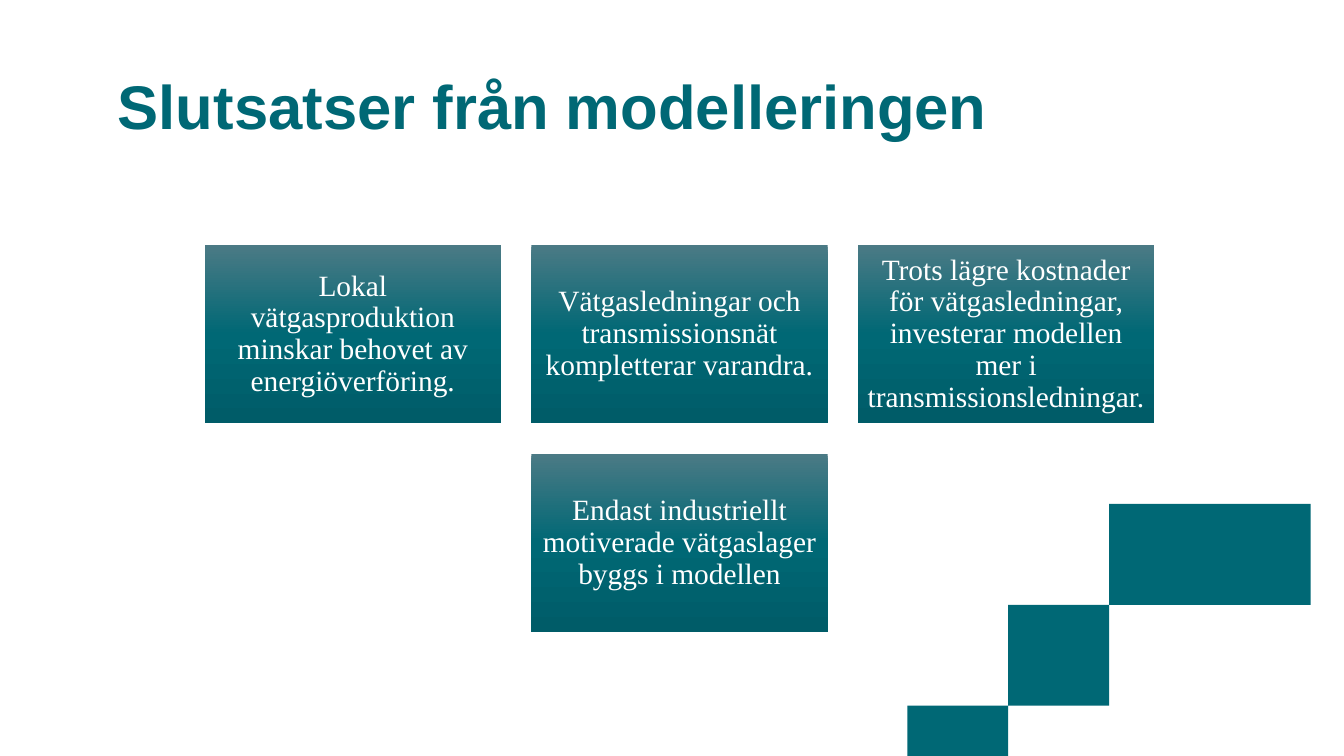
from copy import deepcopy
from dataclasses import dataclass

from pptx import Presentation
from pptx.dml.color import RGBColor
from pptx.enum.shapes import MSO_SHAPE as Preset
from pptx.enum.text import MSO_ANCHOR as Anchor, PP_ALIGN as Align
from pptx.oxml.ns import qn
from pptx.slide import Slide
from pptx.text.text import TextFrame
from pptx.util import Inches, Pt

Point = tuple[float, float]

SLIDE_WIDTH, SLIDE_HEIGHT = 13.33, 7.5
TEAL, WHITE = "006875", "FFFFFF"
CARD_GRADIENT = [(0, "4B7A85"), (0.5, TEAL), (1, "005C68")]
CARD_WIDTH, CARD_HEIGHT, CARD_GAP = 2.94, 1.77, 0.3
GRID_LEFT, GRID_TOP = 2.03, 2.43
CARD_INSET = 0.09
CURVE_STEPS = 40

WAVE_START = (10.36, 7.5)
WAVE_CURVES = [
    ((11.41, 6.67), (12.27, 5.32), (13.33, 5.34)),
    ((13.33, 4.93), (13.32, 5.49), (13.33, 5.16)),
    ((11.47, 4.35), (10.38, 7.23), (8.74, 7.5)),
]


@dataclass
class Card:
    column: int
    row: int
    text: str


CARDS = [
    Card(0, 0, "Lokal vätgasproduktion minskar behovet av energiöverföring."),
    Card(1, 0, "Vätgasledningar och transmissionsnät kompletterar varandra."),
    Card(2, 0, "Trots lägre kostnader för vätgasledningar, investerar modellen "
               "mer i transmissionsledningar."),
    Card(1, 1, "Endast industriellt motiverade vätgaslager byggs i modellen"),
]


def color(value: str) -> RGBColor:
    return RGBColor.from_string(value)


def write_text(frame: TextFrame, text: str, font_name: str, size: float,
               font_color: str, bold: bool = False, align: Align = Align.LEFT) -> None:
    frame.word_wrap = True
    frame.text = text
    paragraph = frame.paragraphs[0]
    paragraph.alignment = align
    paragraph.line_spacing = 0.9
    font = paragraph.runs[0].font
    font.name, font.size, font.bold = font_name, Pt(size), bold
    font.color.rgb = color(font_color)


def curve_points(start: Point, first: Point, second: Point, end: Point) -> list[Point]:
    """Sample a cubic Bézier curve, leaving out its start."""
    points = []
    for step in range(1, CURVE_STEPS + 1):
        t = step / CURVE_STEPS
        weights = ((1 - t) ** 3, 3 * t * (1 - t) ** 2, 3 * t ** 2 * (1 - t), t ** 3)
        x, y = (sum(weight * value for weight, value in zip(weights, axis))
                for axis in zip(start, first, second, end))
        points.append((x, y))
    return points


def add_wave(slide: Slide) -> None:
    points = [WAVE_START]
    for curve in WAVE_CURVES:
        points += curve_points(points[-1], *curve)
    builder = slide.shapes.build_freeform(*WAVE_START, scale=Inches(1))
    builder.add_line_segments(points[1:], close=True)
    wave = builder.convert_to_shape()
    wave.shadow.inherit = False
    wave.fill.solid()
    wave.fill.fore_color.rgb = color(TEAL)
    wave.line.fill.background()


def add_title(slide: Slide, text: str) -> None:
    title = slide.shapes.add_textbox(Inches(1.07), Inches(0.71), Inches(11.35), Inches(1.42))
    write_text(title.text_frame, text, "Arial", 44, TEAL, bold=True)


def add_card(slide: Slide, card: Card) -> None:
    left = GRID_LEFT + card.column * (CARD_WIDTH + CARD_GAP)
    top = GRID_TOP + card.row * (CARD_HEIGHT + CARD_GAP)
    shape = slide.shapes.add_shape(Preset.RECTANGLE, Inches(left), Inches(top),
                                   Inches(CARD_WIDTH), Inches(CARD_HEIGHT))
    shape.shadow.inherit = False
    shape.line.fill.background()

    shape.fill.gradient()
    shape.fill.gradient_angle = 270
    stop_list = next(shape.element.iter(qn("a:gsLst")))
    stop_list.append(deepcopy(stop_list[-1]))
    for stop, (position, value) in zip(shape.fill.gradient_stops, CARD_GRADIENT):
        stop.position = position
        stop.color.rgb = color(value)

    frame = shape.text_frame
    frame.margin_left = frame.margin_right = Inches(CARD_INSET)
    frame.margin_top = frame.margin_bottom = Inches(CARD_INSET)
    frame.vertical_anchor = Anchor.MIDDLE
    write_text(frame, card.text, "Times New Roman", 21, WHITE, align=Align.CENTER)


def main() -> None:
    presentation = Presentation()
    presentation.slide_width = Inches(SLIDE_WIDTH)
    presentation.slide_height = Inches(SLIDE_HEIGHT)
    slide = presentation.slides.add_slide(presentation.slide_layouts[6])
    add_wave(slide)
    add_title(slide, "Slutsatser från modelleringen")
    for card in CARDS:
        add_card(slide, card)
    presentation.save("out.pptx")


if __name__ == "__main__":
    main()
